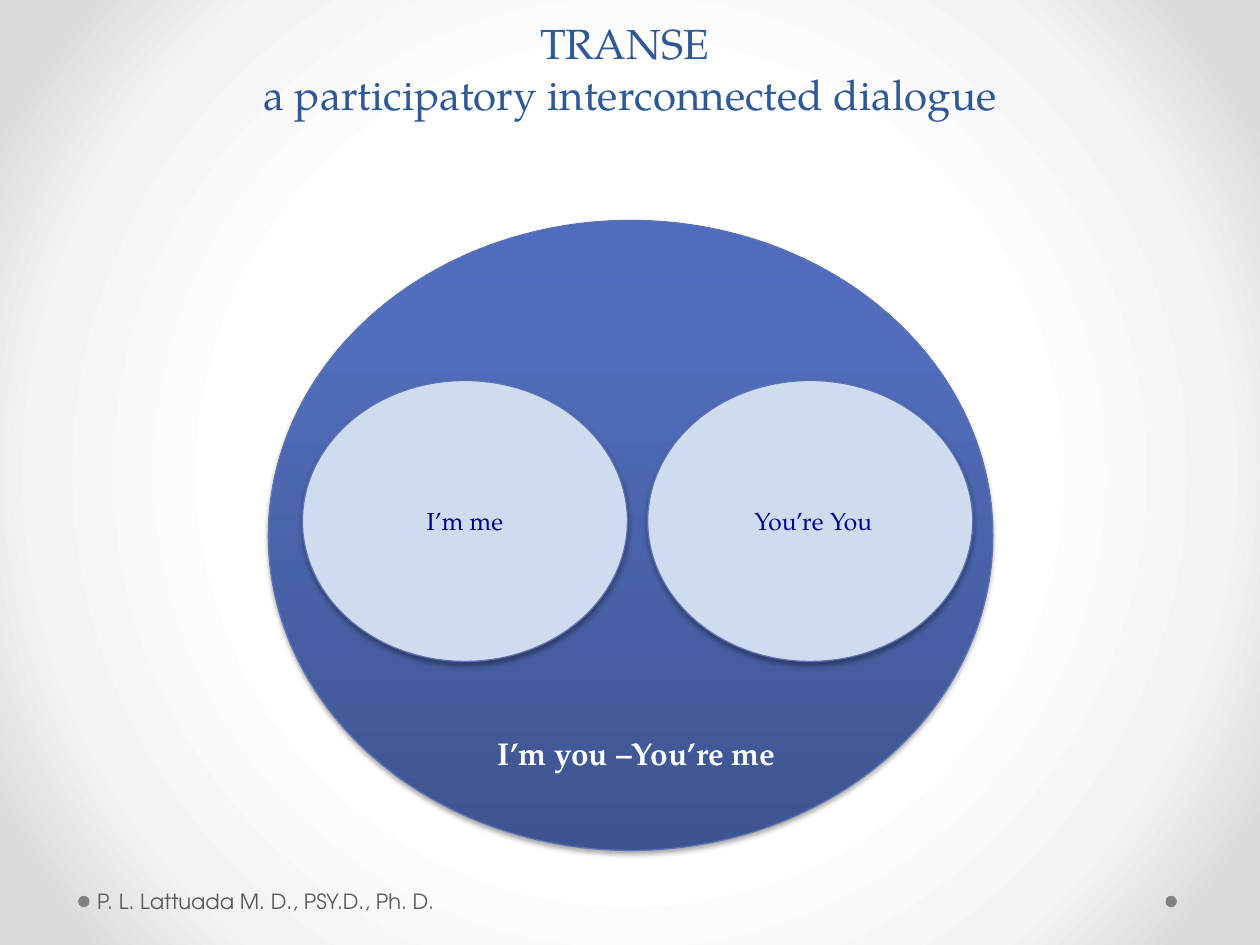
from lxml import etree
from pptx import Presentation
from pptx.dml.color import RGBColor
from pptx.enum.shapes import MSO_SHAPE
from pptx.enum.text import MSO_ANCHOR, PP_ALIGN
from pptx.oxml import parse_xml
from pptx.oxml.ns import nsdecls, qn
from pptx.util import Inches, Pt

OVAL = MSO_SHAPE.OVAL
LEFT, CENTER = PP_ALIGN.LEFT, PP_ALIGN.CENTER
TOP, MIDDLE, BOTTOM = MSO_ANCHOR.TOP, MSO_ANCHOR.MIDDLE, MSO_ANCHOR.BOTTOM
SERIF, SANS = "TeX Gyre Pagella", "TeX Gyre Adventor"
COLORS = {
    "title": "2F5897", "outline": "5C72B2", "person": "CFDCF0",
    "person_text": "000090", "white": "FFFFFF", "footer": "595959",
    "dot": "808080", "shadow": "000000",
}
BACKGROUND_STOPS = [(50, "FFFFFF"), (76, "F4F4F4"), (92, "DADADA")]
UNITY_STOPS = [(0, "3E5490"), (80, "516DBB"), (100, "4F6CBE")]
RADIAL = ('<a:path path="circle"><a:fillToRect l="50000" t="50000" '
          'r="50000" b="50000"/></a:path>')
UPWARD = '<a:lin ang="16200000" scaled="0"/>'


class SlideBuilder:
    """Holds the slide and the style shared by its elements."""

    def __init__(self, slide):
        self.slide = slide

    def color(self, name):
        return RGBColor.from_string(COLORS[name])

    def gradient(self, fill, parent, stops, direction):
        """Fill with the given stops, replacing the default gradient."""
        fill.gradient()
        default = next(parent.iter(qn("a:gradFill")))
        stop_xml = "".join(
            f'<a:gs pos="{position * 1000}"><a:srgbClr val="{value}"/></a:gs>'
            for position, value in stops)
        default.getparent().replace(default, parse_xml(
            f'<a:gradFill {nsdecls("a")} rotWithShape="1">'
            f'<a:gsLst>{stop_xml}</a:gsLst>{direction}</a:gradFill>'))

    def background(self, stops):
        background = self.slide.background
        self.gradient(background.fill, self.slide.element, stops, RADIAL)

    def label(self, shape, text, size, color, font=SERIF, bold=False,
              align=CENTER, anchor=MIDDLE):
        frame = shape.text_frame
        frame.word_wrap = True
        frame.vertical_anchor = anchor
        frame.text = text
        for paragraph in frame.paragraphs:
            paragraph.alignment = align
            for run in paragraph.runs:
                run.font.name = font
                run.font.size = Pt(size)
                run.font.bold = bold
                run.font.color.rgb = self.color(color)

    def text(self, box, text, size, color, left_inset=0.1, **style):
        shape = self.slide.shapes.add_textbox(*map(Inches, box))
        shape.text_frame.margin_left = Inches(left_inset)
        self.label(shape, text, size, color, **style)

    def oval(self, box, fill=None, stops=None):
        shape = self.slide.shapes.add_shape(OVAL, *map(Inches, box))
        shape.shadow.inherit = False
        if stops:
            self.gradient(shape.fill, shape.element.spPr, stops, UPWARD)
        else:
            shape.fill.solid()
            shape.fill.fore_color.rgb = self.color(fill)
        shape.line.fill.background()
        return shape

    def circle(self, box, **fill):
        """An oval with an outline and a soft shadow below it."""
        shape = self.oval(box, **fill)
        shape.line.color.rgb = self.color("outline")
        shape.line.width = Pt(0.75)
        effects = shape.element.spPr.find(qn("a:effectLst"))
        shadow = etree.SubElement(
            effects, qn("a:outerShdw"), blurRad=str(Pt(3.1)),
            dist=str(Pt(1.8)), dir="5400000", rotWithShape="0")
        tint = etree.SubElement(shadow, qn("a:srgbClr"), val=COLORS["shadow"])
        etree.SubElement(tint, qn("a:alpha"), val="35000")
        return shape


def main():
    presentation = Presentation()
    presentation.slide_width = Inches(10)
    presentation.slide_height = Inches(7.5)
    slide = presentation.slides.add_slide(presentation.slide_layouts[6])
    builder = SlideBuilder(slide)

    # Background and footer dots
    builder.background(BACKGROUND_STOPS)
    for left in (9.25, 0.62):
        builder.oval((left, 7.11, 0.09, 0.09), fill="dot")

    # Title
    builder.text((0.5, 0.3, 9, 0.69),
                 "TRANSE \na participatory interconnected dialogue",
                 24, "title", anchor=BOTTOM)

    # Shared circle holding the two people
    builder.circle((2.13, 1.75, 5.75, 5), stops=UNITY_STOPS)
    for left, words in ((2.4, "I’m me"), (5.14, " You’re You")):
        person = builder.circle((left, 3.02, 2.58, 2.23), fill="person")
        builder.label(person, words, 14, "person_text")

    # Footer and caption of the shared circle
    builder.text((0.72, 6.95, 3.11, 0.4),
                 "P. L. Lattuada M. D., PSY.D., Ph. D.", 12, "footer",
                 left_inset=0.05, font=SANS, align=LEFT)
    builder.text((3.84, 5.78, 2.43, 0.4), "I’m you –You’re me", 18, "white",
                 bold=True, anchor=TOP)

    presentation.save("out.pptx")


if __name__ == "__main__":
    main()
